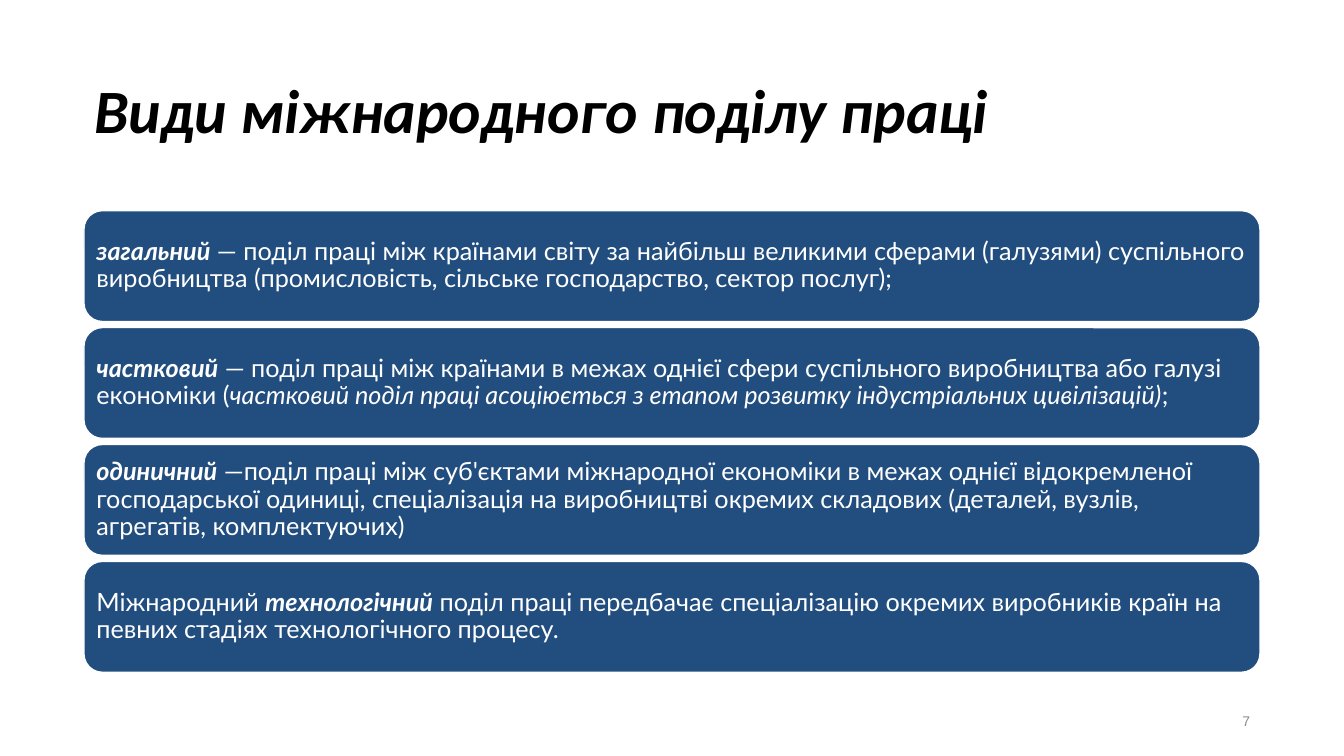
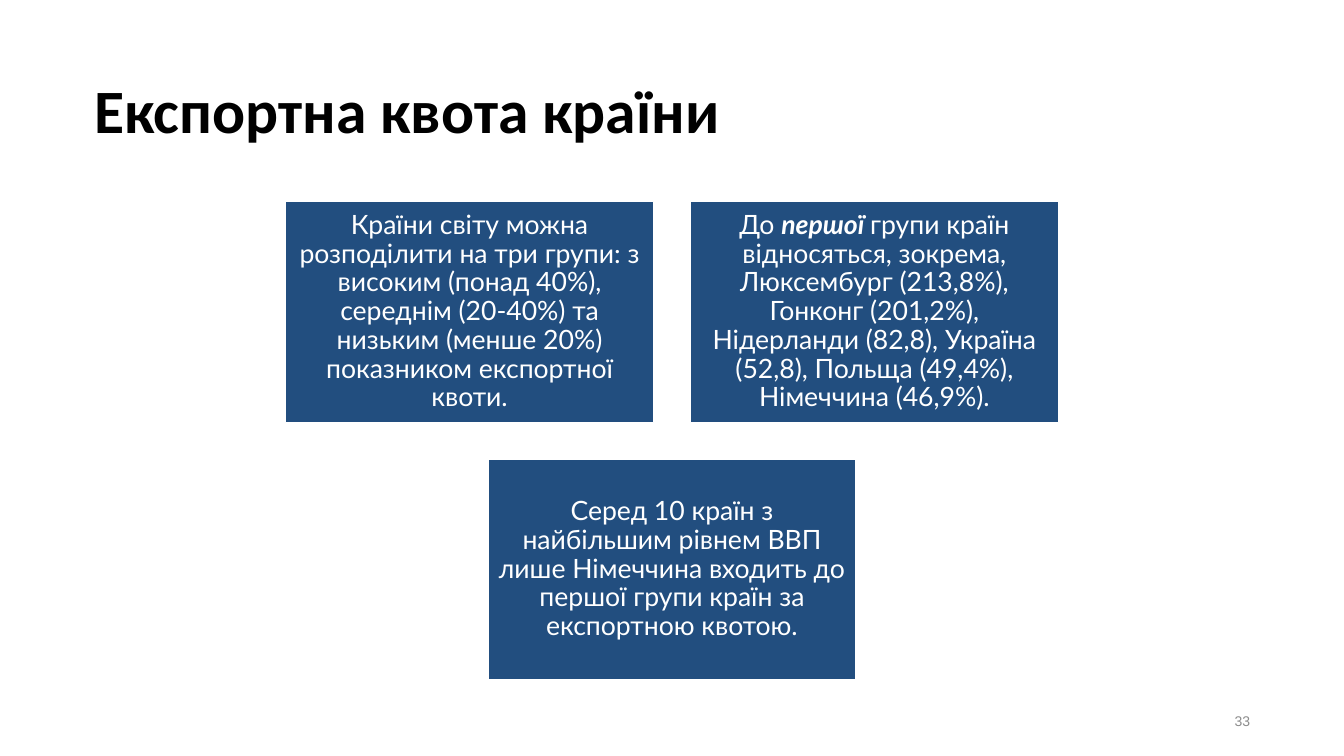
"""Build two slides on the division of labour and export quotas."""
from pptx import Presentation
from pptx.dml.color import RGBColor
from pptx.enum.shapes import MSO_SHAPE
from pptx.enum.text import MSO_ANCHOR, MSO_AUTO_SIZE, PP_ALIGN
from pptx.util import Inches, Pt

LEFT, CENTER, RIGHT = PP_ALIGN.LEFT, PP_ALIGN.CENTER, PP_ALIGN.RIGHT
MIDDLE = MSO_ANCHOR.MIDDLE
NO_FIT = MSO_AUTO_SIZE.NONE
RECT, ROUNDED = MSO_SHAPE.RECTANGLE, MSO_SHAPE.ROUNDED_RECTANGLE

NAVY = RGBColor(0x22, 0x4E, 0x7F)
WHITE = RGBColor(0xFF, 0xFF, 0xFF)
BLACK = RGBColor(0x00, 0x00, 0x00)
GRAY = RGBColor(0x8C, 0x8C, 0x8C)

TITLE_FONT, BODY_FONT, NUMBER_FONT = "Calibri", "Lato", "Arial"
WIDTH, HEIGHT = 13.33, 7.5
MARGIN = WIDTH / 16
CONTENT = WIDTH - 2 * MARGIN
TITLE_ONLY = 5

KINDS = [
    [("загальний", "bi"),
     (" — поділ праці між країнами світу за найбільш великими сферами (галузями) "
      "суспільного виробництва (промисловість, сільське господарство, сектор послуг);", "")],
    [("частковий", "bi"),
     (" — поділ праці між країнами в межах однієї сфери суспільного виробництва "
      "або галузі економіки (", ""),
     ("частковий поділ праці асоціюється з етапом розвитку індустріальних цивілізацій)", "i"),
     (";", "")],
    [("одиничний", "bi"),
     (" —поділ праці між суб'єктами міжнародної економіки в межах однієї відокремленої "
      "господарської одиниці, спеціалізація на виробництві окремих складових "
      "(деталей, вузлів, агрегатів, комплектуючих)", "")],
    [("Міжнародний ", ""), ("технологічний", "bi"),
     (" поділ праці передбачає спеціалізацію окремих виробників країн на певних "
      "стадіях технологічного процесу.", "")],
]

QUOTA_ROWS = [
    [
        [("Країни світу можна розподілити на три групи: з високим (понад 40%), "
          "середнім (20-40%) та низьким (менше 20%) показником експортної квоти.", "")],
        [("До ", ""), ("першої ", "bi"),
         ("групи країн відносяться, зокрема, Люксембург (213,8%), Гонконг (201,2%), "
          "Нідерланди (82,8), Україна (52,8), Польща (49,4%), Німеччина (46,9%).", "")],
    ],
    [
        [("Серед 10 країн з найбільшим рівнем ВВП лише Німеччина входить до першої "
          "групи країн за експортною квотою.", "")],
    ],
]


def place(sp, left, top, width, height):
    """Set the position and size of a shape in inches."""
    sp.left, sp.top = Inches(left), Inches(top)
    sp.width, sp.height = Inches(width), Inches(height)


def write(sp, runs, font, size, color, align=LEFT, spacing=0.9):
    """Fill a shape with one paragraph of styled runs."""
    tf = sp.text_frame
    tf.word_wrap = True
    tf.auto_size = NO_FIT
    tf.vertical_anchor = MIDDLE
    p = tf.paragraphs[0]
    p.alignment = align
    p.line_spacing = spacing
    for text, style in runs:
        r = p.add_run()
        r.text = text
        r.font.name = font
        r.font.size = Pt(size)
        r.font.bold = "b" in style
        r.font.italic = "i" in style
        r.font.color.rgb = color


def add_slide(prs, title, style, number):
    """Add a slide with its title and page number."""
    s = prs.slides.add_slide(prs.slide_layouts[TITLE_ONLY])
    place(s.shapes.title, MARGIN, 0.4, CONTENT, 1.45)
    write(s.shapes.title, [(title, style)], TITLE_FONT, 44, BLACK)
    width = 3.08
    sp = s.shapes.add_textbox(0, 0, 0, 0)
    place(sp, WIDTH - MARGIN - width, 6.95, width, 0.4)
    write(sp, [(number, "")], NUMBER_FONT, 10, GRAY, RIGHT, 1.0)
    return s


def add_panel(s, preset, box, runs, size, inset, align):
    """Add a filled panel holding styled text."""
    sp = s.shapes.add_shape(preset, 0, 0, 0, 0)
    place(sp, *box)
    sp.shadow.inherit = False
    sp.fill.solid()
    sp.fill.fore_color.rgb = NAVY
    sp.line.color.rgb = WHITE
    sp.line.width = Pt(1)
    tf = sp.text_frame
    tf.margin_left = tf.margin_right = Inches(inset)
    tf.margin_top = tf.margin_bottom = Inches(inset)
    write(sp, runs, BODY_FONT, size, WHITE, align)


def add_bars(s, items, top=2.09, height=1.1, gap=0.06):
    """Stack full-width rounded bars."""
    for i, runs in enumerate(items):
        box = (MARGIN, top + i * (height + gap), CONTENT, height)
        add_panel(s, ROUNDED, box, runs, 18, 0.07, LEFT)


def add_cards(s, rows, top=2.0, width=3.65):
    """Lay out rows of cards, each row centred on the slide."""
    height, gap = 0.6 * width, 0.1 * width
    for i, row in enumerate(rows):
        left = (WIDTH - len(row) * (width + gap) + gap) / 2
        for j, runs in enumerate(row):
            box = (left + j * (width + gap), top + i * (height + gap), width, height)
            add_panel(s, RECT, box, runs, 19, 0.08, CENTER)


def main():
    """Build and save the presentation."""
    prs = Presentation()
    prs.slide_width, prs.slide_height = Inches(WIDTH), Inches(HEIGHT)
    add_bars(add_slide(prs, "Види міжнародного поділу праці", "bi", "7"), KINDS)
    add_cards(add_slide(prs, "Експортна квота країни", "b", "33"), QUOTA_ROWS)
    prs.save("out.pptx")


if __name__ == "__main__":
    main()
